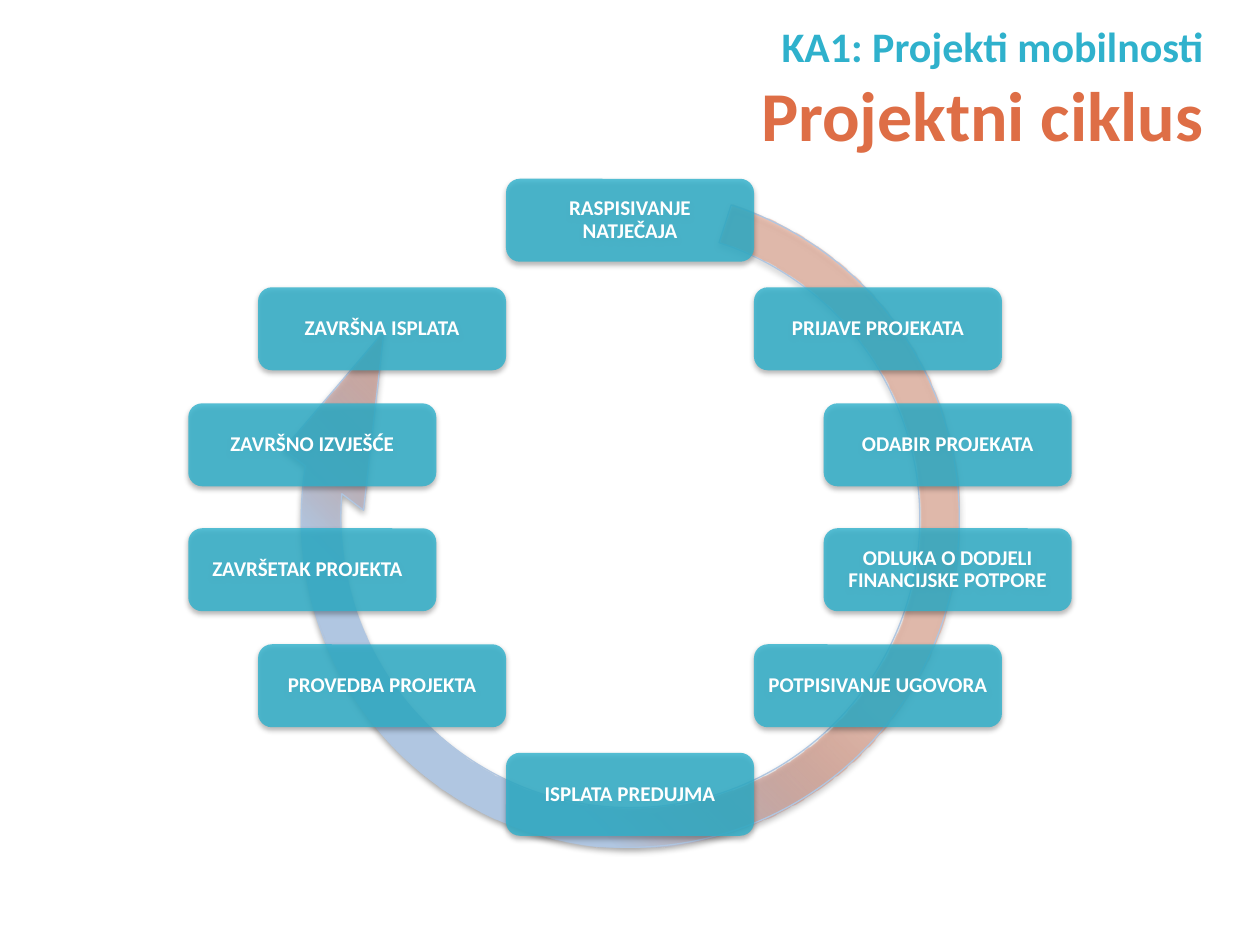
from dataclasses import dataclass

from lxml import etree
from pptx import Presentation
from pptx.dml import color
from pptx.enum import shapes, text
from pptx.oxml import ns
from pptx.util import Pt


@dataclass(frozen=True)
class Theme:
    font: str = "Calibri"
    teal: str = "2FB1CC"
    orange: str = "DE6E46"
    blue: str = "B0C6E1"
    pale_blue: str = "CAD9EB"
    white: str = "FFFFFF"
    shadow: str = "000000"
    kicker_size: int = 24
    title_size: int = 40
    step_size: int = 12


THEME = Theme()
STEP_WIDTH, STEP_HEIGHT = 141.7, 47.4

# Clockwise from the top
STEPS = [
    "RASPISIVANJE NATJEČAJA",
    "PRIJAVE PROJEKATA",
    "ODABIR PROJEKATA",
    "ODLUKA O DODJELI FINANCIJSKE POTPORE",
    "POTPISIVANJE UGOVORA",
    "ISPLATA PREDUJMA",
    "PROVEDBA PROJEKTA",
    "ZAVRŠETAK PROJEKTA",
    "ZAVRŠNO IZVJEŠĆE",
    "ZAVRŠNA ISPLATA",
]
# Extra room on the right moves a label off centre
EXTRA_RIGHT_INSET = {"ZAVRŠETAK PROJEKTA": 5.5}


def rgb(value):
    return color.RGBColor.from_string(value)


def add_element(parent, tag, **attributes):
    return etree.SubElement(parent, ns.qn(tag), attributes)


def add_color(parent, value, alpha=None):
    element = add_element(parent, "a:srgbClr", val=value)
    if alpha is not None:
        add_element(element, "a:alpha", val=str(alpha * 1000))


def add_soft_shadow(shape):
    shape.shadow.inherit = False
    effects = shape._element.spPr.find(ns.qn("a:effectLst"))
    shadow = add_element(effects, "a:outerShdw", blurRad=str(Pt(3.1)), dist=str(Pt(1.8)),
                         dir="5400000", rotWithShape="0")
    add_color(shadow, THEME.shadow, 35)


def add_run(paragraph, words, size, value):
    run = paragraph.add_run()
    run.text = words
    run.font.name = THEME.font
    run.font.size = Pt(size)
    run.font.bold = True
    run.font.color.rgb = rgb(value)


def add_heading(slide, left, top, width, height):
    frame = slide.shapes.add_textbox(Pt(left), Pt(top), Pt(width), Pt(height)).text_frame
    frame.word_wrap = True
    frame.vertical_anchor = text.MSO_ANCHOR.BOTTOM
    frame.margin_bottom = Pt(0)
    lines = [("KA1: Projekti mobilnosti", THEME.kicker_size, THEME.teal),
             ("Projektni ciklus", THEME.title_size, THEME.orange)]
    for index, (words, size, value) in enumerate(lines):
        paragraph = frame.add_paragraph() if index else frame.paragraphs[0]
        paragraph.alignment = text.PP_ALIGN.RIGHT
        add_run(paragraph, words, size, value)


def add_cycle_arrow(slide, left, top, size):
    arrow = slide.shapes.add_shape(shapes.MSO_SHAPE.CIRCULAR_ARROW,
                                   Pt(left), Pt(top), Pt(size), Pt(size))
    for index, value in enumerate([0.055, 18.03, 143.54, 203.97, 0.07]):
        arrow.adjustments[index] = value
    arrow.rotation = 307.9
    arrow.line.color.rgb = rgb(THEME.blue)
    arrow.line.width = Pt(0.75)

    # Radial gradient that spreads from the top right corner
    arrow.fill.gradient()
    gradient = arrow._element.spPr.find(ns.qn("a:gradFill"))
    for child in list(gradient):
        gradient.remove(child)
    gradient.set("rotWithShape", "1")
    stops = add_element(gradient, "a:gsLst")
    for position, value, alpha in [(47, THEME.orange, 34), (67, THEME.blue, None),
                                   (83, THEME.blue, None), (100, THEME.pale_blue, None)]:
        stop = add_element(stops, "a:gs", pos=str(position * 1000))
        add_color(stop, value, alpha)
    circle = add_element(gradient, "a:path", path="circle")
    add_element(circle, "a:fillToRect", l="100000", b="100000")
    add_soft_shadow(arrow)


def add_step(slide, label, left, top):
    step = slide.shapes.add_shape(shapes.MSO_SHAPE.ROUNDED_RECTANGLE,
                                  Pt(left), Pt(top), Pt(STEP_WIDTH), Pt(STEP_HEIGHT))
    step.fill.solid()
    step.fill.fore_color.rgb = rgb(THEME.teal)
    fill_color = step._element.spPr.find(ns.qn("a:solidFill"))[0]
    add_element(fill_color, "a:alpha", val="81000")
    step.line.fill.background()
    add_soft_shadow(step)

    frame = step.text_frame
    frame.word_wrap = True
    frame.vertical_anchor = text.MSO_ANCHOR.MIDDLE
    frame.margin_left = frame.margin_top = frame.margin_bottom = Pt(5.5)
    frame.margin_right = Pt(5.5 + EXTRA_RIGHT_INSET.get(label, 0))
    paragraph = frame.paragraphs[0]
    paragraph.alignment = text.PP_ALIGN.CENTER
    paragraph.line_spacing = 0.9
    add_run(paragraph, label, THEME.step_size, THEME.white)


def add_cycle(slide, left, top, width, height):
    center_x, center_y = left + width / 2, top + height / 2
    add_cycle_arrow(slide, center_x - 205.3, center_y + 6.2 - 205.5, 411)

    # Right half from top to bottom; the left half is its point reflection
    outer_x, outer_y = (width - STEP_WIDTH) / 2, (height - STEP_HEIGHT) / 2
    half = [(0, -outer_y), (STEP_WIDTH, -102), (outer_x, -35.7),
            (outer_x, 35.7), (STEP_WIDTH, 102)]
    offsets = half + [(-x, -y) for x, y in half]
    for label, (x, y) in zip(STEPS, offsets):
        add_step(slide, label, center_x + x - STEP_WIDTH / 2, center_y + y - STEP_HEIGHT / 2)


def main():
    presentation = Presentation()
    presentation.slide_width, presentation.slide_height = Pt(720), Pt(540)
    slide = presentation.slides.add_slide(presentation.slide_layouts[6])
    add_heading(slide, 46.8, -1.4, 648, 90)
    add_cycle(slide, 107.6, 102.2, 504.8, 375.4)
    presentation.save("out.pptx")


if __name__ == "__main__":
    main()
